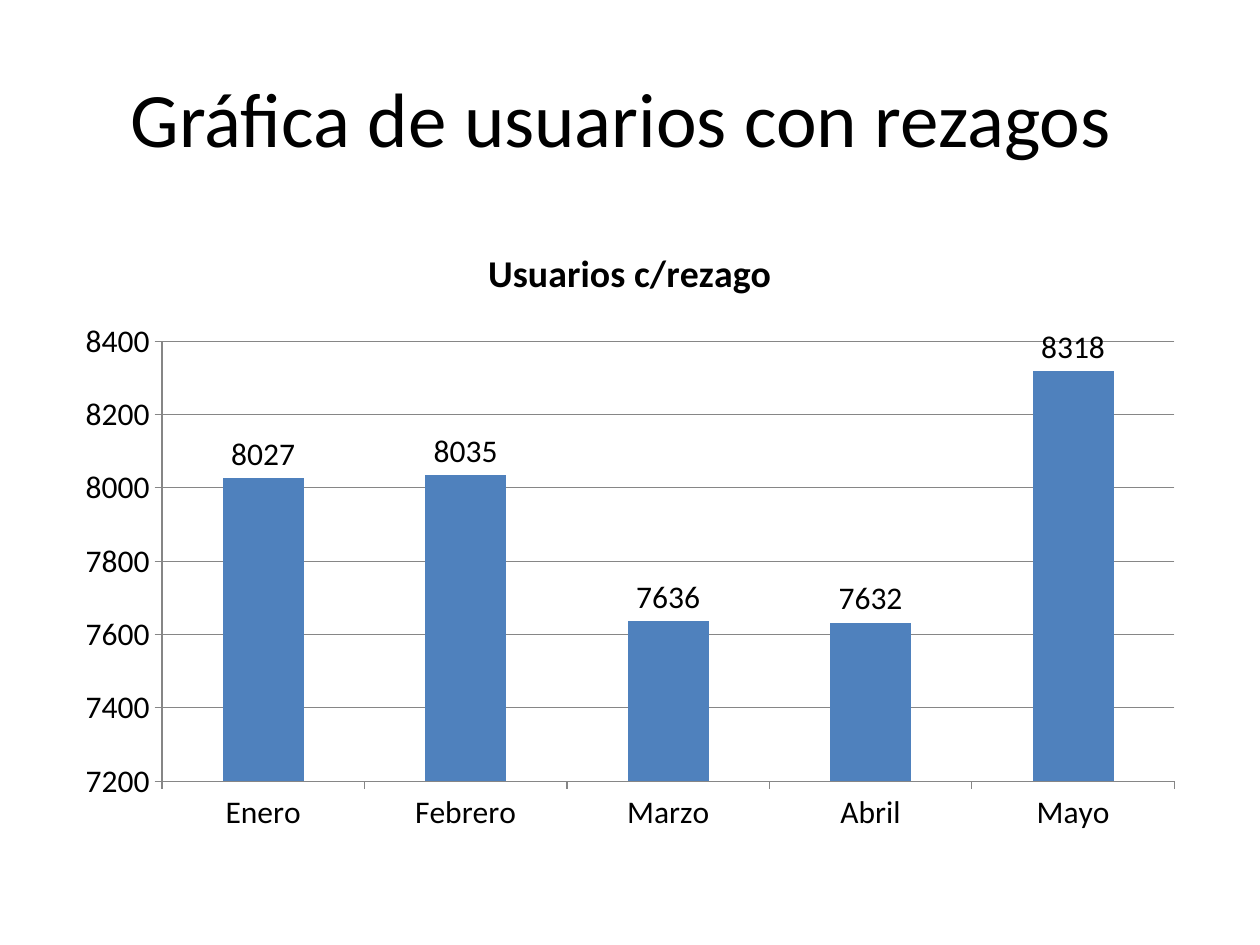
from dataclasses import dataclass

from pptx import Presentation
from pptx.chart.axis import _BaseAxis
from pptx.chart.chart import Chart
from pptx.chart.data import CategoryChartData
from pptx.dml.color import RGBColor
from pptx.enum.chart import XL_CHART_TYPE, XL_LABEL_POSITION, XL_TICK_MARK
from pptx.enum.text import MSO_ANCHOR, PP_ALIGN
from pptx.slide import Slide
from pptx.text.text import Font, TextFrame
from pptx.util import Emu, Pt

COLUMNS = XL_CHART_TYPE.COLUMN_CLUSTERED
OUTSIDE_END = XL_LABEL_POSITION.OUTSIDE_END
TICK_OUT = XL_TICK_MARK.OUTSIDE
MIDDLE = MSO_ANCHOR.MIDDLE
CENTER = PP_ALIGN.CENTER

EMU_PER_PX = 9144  # 100 px to the inch
FONT = "Calibri"
COLORS = {"background": "FFFFFF", "text": "000000", "bar": "4F81BD", "line": "868686"}
TITLE_ONLY = 5


@dataclass(frozen=True)
class Area:
    left: int
    top: int
    width: int
    height: int

    def emu(self) -> tuple[Emu, ...]:
        return tuple(px(n) for n in (self.left, self.top, self.width, self.height))


@dataclass(frozen=True)
class Month:
    name: str
    users: int


TITLE_AREA = Area(50, 30, 900, 125)
CHART_AREA = Area(50, 175, 900, 495)
MONTHS = [
    Month("Enero", 8027),
    Month("Febrero", 8035),
    Month("Marzo", 7636),
    Month("Abril", 7632),
    Month("Mayo", 8318),
]


def px(length: int) -> Emu:
    return Emu(length * EMU_PER_PX)


def color(name: str) -> RGBColor:
    return RGBColor.from_string(COLORS[name])


def format_font(font: Font, size: float, bold: bool = False) -> None:
    font.name = FONT
    font.size = Pt(size)
    font.bold = bold
    font.color.rgb = color("text")


def write_text(frame: TextFrame, text: str, *, size: float, bold: bool = False) -> None:
    para = frame.paragraphs[0]
    para.alignment = CENTER
    span = para.add_run()
    span.text = text
    format_font(span.font, size, bold)


def add_title(page: Slide, text: str) -> None:
    title = page.shapes.title
    title.left, title.top, title.width, title.height = TITLE_AREA.emu()
    title.text_frame.word_wrap = True
    title.text_frame.vertical_anchor = MIDDLE
    write_text(title.text_frame, text, size=44)


def format_axis(axis: _BaseAxis, gridlines: bool) -> None:
    axis.major_tick_mark = TICK_OUT
    axis.has_major_gridlines = gridlines
    lines = [axis.format.line]
    if gridlines:
        lines.append(axis.major_gridlines.format.line)
    for line in lines:
        line.color.rgb = color("line")
        line.width = Pt(0.75)
    format_font(axis.tick_labels.font, 18)


def add_user_chart(page: Slide, name: str, months: list[Month]) -> Chart:
    data = CategoryChartData()
    data.categories = [month.name for month in months]
    data.add_series(name, [month.users for month in months])
    chart = page.shapes.add_chart(COLUMNS, *CHART_AREA.emu(), data).chart
    format_font(chart.font, 18)
    chart.has_legend = False
    chart.has_title = True
    write_text(chart.chart_title.text_frame, name, size=21.6, bold=True)
    chart.chart_title.include_in_layout = False

    # Axes
    format_axis(chart.category_axis, gridlines=False)
    format_axis(chart.value_axis, gridlines=True)
    chart.value_axis.minimum_scale = 7200
    chart.value_axis.maximum_scale = 8400
    chart.value_axis.major_unit = 200

    # Bars and their values
    plot = chart.plots[0]
    plot.gap_width = 150
    plot.vary_by_categories = False
    bars = plot.series[0]
    bars.format.fill.solid()
    bars.format.fill.fore_color.rgb = color("bar")
    labels = bars.data_labels
    labels.show_value = True
    labels.position = OUTSIDE_END
    format_font(labels.font, 18)
    return chart


def main() -> None:
    deck = Presentation()
    deck.slide_width, deck.slide_height = px(1000), px(750)
    page = deck.slides.add_slide(deck.slide_layouts[TITLE_ONLY])
    page.background.fill.solid()
    page.background.fill.fore_color.rgb = color("background")
    add_title(page, "Gráfica de usuarios con rezagos ")
    add_user_chart(page, "Usuarios c/rezago", MONTHS)
    deck.save("out.pptx")


if __name__ == "__main__":
    main()
